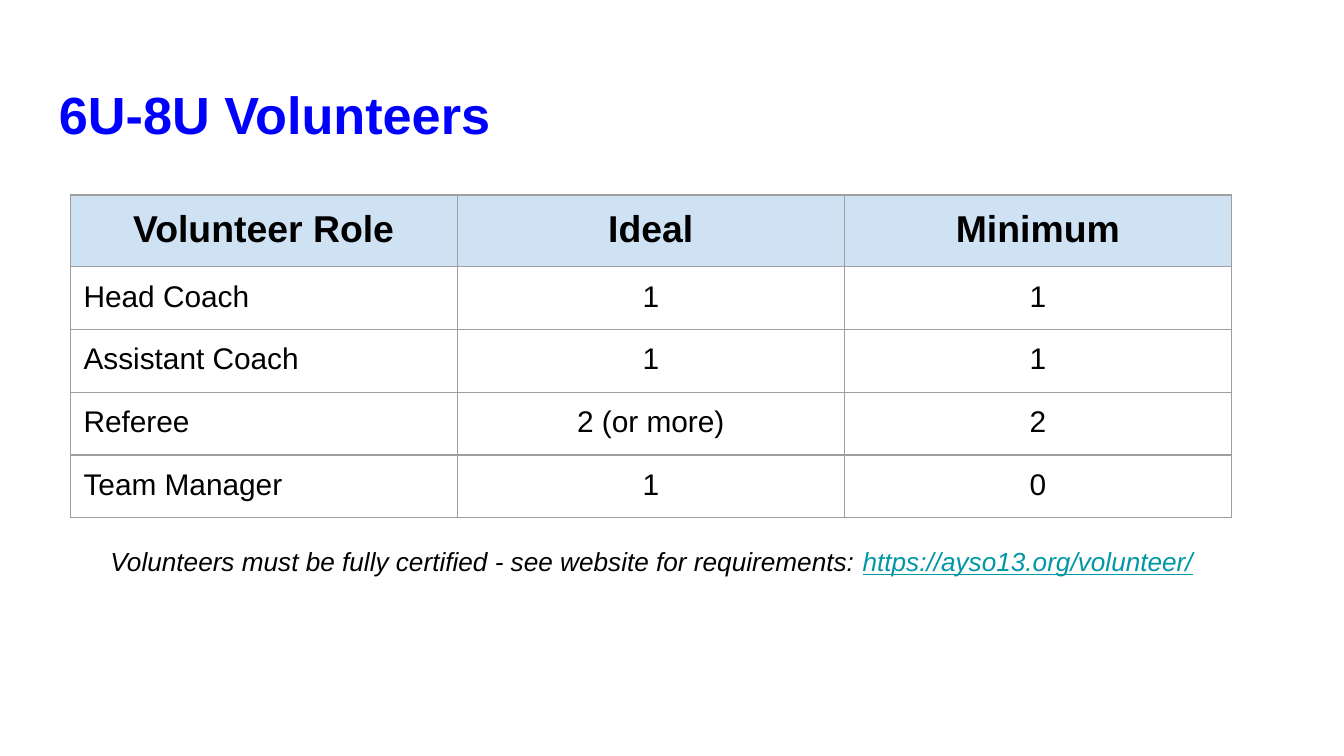
"""Build the 6U-8U volunteers slide."""
from lxml.etree import SubElement as Sub
from pptx import Presentation as Deck
from pptx.dml.color import RGBColor as RGB
from pptx.enum.text import PP_ALIGN as Align
from pptx.oxml.ns import qn
from pptx.util import Pt

BLACK = RGB(0x00, 0x00, 0x00)
BLUE = RGB(0x00, 0x00, 0xFF)
TEAL = RGB(0x00, 0x97, 0xA7)
PALE = RGB(0xCF, 0xE2, 0xF3)
GREY = RGB(0x9E, 0x9E, 0x9E)
PAD = Pt(7.2)
ROWS = [
    ("Volunteer Role", "Ideal", "Minimum"),
    ("Head Coach", "1", "1"),
    ("Assistant Coach", "1", "1"),
    ("Referee", "2 (or more)", "2"),
    ("Team Manager", "1", "0"),
]


def style(run, size, color=BLACK, bold=False, italic=False, line=False):
    """Set the font of one run."""
    font = run.font
    font.name, font.size, font.color.rgb = "Arial", Pt(size), color
    font.bold, font.italic, font.underline = bold, italic, line


def pad(item):
    """Give a cell or text frame equal margins."""
    item.margin_left = item.margin_right = PAD
    item.margin_top = item.margin_bottom = PAD


def add_box(slide, left, top, width, height):
    """Add a wrapping text box and return its first paragraph."""
    frame = slide.shapes.add_textbox(
        Pt(left), Pt(top), Pt(width), Pt(height)).text_frame
    frame.word_wrap = True
    pad(frame)
    return frame.paragraphs[0]


def edge(cell):
    """Draw thin grey borders around a cell."""
    props = cell._tc.get_or_add_tcPr()
    for spot, side in enumerate(("lnL", "lnR", "lnT", "lnB")):
        line = Sub(props, qn(f"a:{side}"), w=str(Pt(0.75)))
        fill = Sub(line, qn("a:solidFill"))
        Sub(fill, qn("a:srgbClr"), val=str(GREY))
        props.insert(spot, line)


def fill_cell(cell, text, head, mid):
    """Write and format one table cell."""
    pad(cell)
    cell.text_frame.text = text
    para = cell.text_frame.paragraphs[0]
    para.alignment = Align.CENTER if mid else Align.LEFT
    style(para.runs[0], 20 if head else 16, bold=head)
    if head:
        cell.fill.solid()
        cell.fill.fore_color.rgb = PALE
    else:
        cell.fill.background()
    edge(cell)


def add_grid(slide):
    """Add the table of volunteer roles."""
    grid = slide.shapes.add_table(
        len(ROWS), 3, Pt(37.6), Pt(104.5), Pt(622.2), Pt(170.8)).table
    for col in grid.columns:
        col.width = Pt(207.4)
    for r, texts in enumerate(ROWS):
        grid.rows[r].height = Pt(33.6 if r else 36.4)
        for c, text in enumerate(texts):
            fill_cell(grid.cell(r, c), text, r == 0, r == 0 or c > 0)


def add_title(slide):
    """Add the slide title."""
    para = add_box(slide, 24.5, 37, 671, 45.4)
    para.text = "6U-8U Volunteers"
    style(para.runs[0], 28, BLUE, bold=True)


def add_note(slide):
    """Add the note on certification with its web address."""
    para = add_box(slide, 38.2, 285, 622, 49.7)
    para.alignment = Align.CENTER
    para.text = ("Volunteers must be fully certified - "
                 "see website for requirements: ")
    style(para.runs[0], 14, italic=True)
    link = para.add_run()
    link.text = "https://ayso13.org/volunteer/"
    style(link, 14, TEAL, italic=True, line=True)


def main():
    """Build and save the slide."""
    deck = Deck()
    deck.slide_width, deck.slide_height = Pt(720), Pt(405)
    slide = deck.slides.add_slide(deck.slide_layouts[6])
    add_title(slide)
    add_grid(slide)
    add_note(slide)
    deck.save("out.pptx")


if __name__ == "__main__":
    main()
